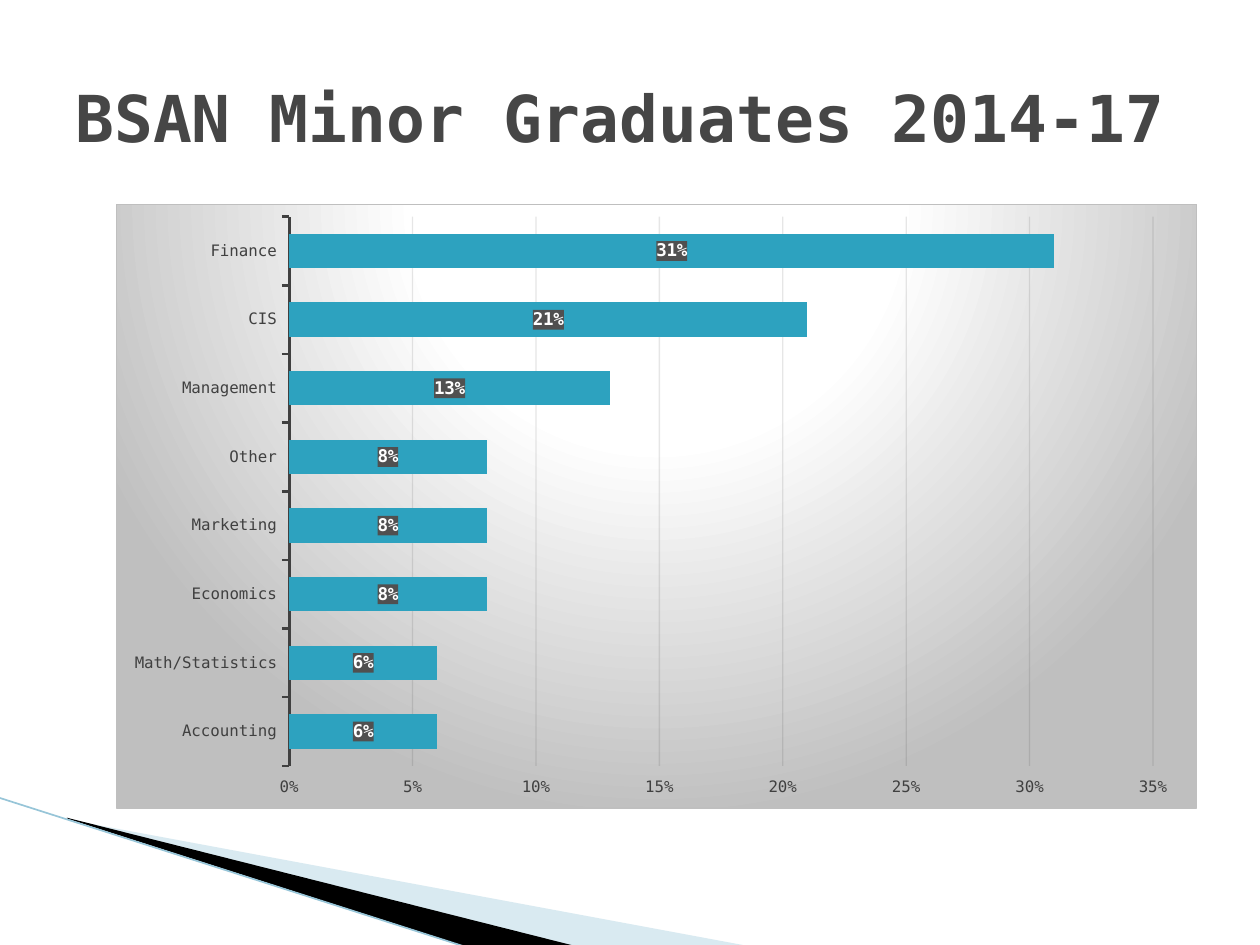
from lxml.etree import SubElement
from pptx import Presentation
from pptx.chart.data import CategoryChartData
from pptx.dml.color import RGBColor
from pptx.enum.chart import XL_CHART_TYPE, XL_LABEL_POSITION, XL_TICK_MARK
from pptx.enum.shapes import MSO_CONNECTOR
from pptx.enum.text import MSO_ANCHOR
from pptx.oxml import parse_xml
from pptx.oxml.ns import nsdecls, qn
from pptx.util import Pt

FONT = "DejaVu Sans Mono"
GRADUATE_SHARES = {
    "Accounting": 0.06,
    "Math/Statistics": 0.06,
    "Economics": 0.08,
    "Marketing": 0.08,
    "Other": 0.08,
    "Management": 0.13,
    "CIS": 0.21,
    "Finance": 0.31,
}


def color(value):
    return RGBColor.from_string(value)


def format_font(font, size, fill, bold=False):
    font.name = FONT
    font.size = Pt(size)
    font.bold = bold
    font.color.rgb = color(fill)


def set_alpha(solid_fill, percent):
    SubElement(solid_fill[0], qn("a:alpha")).set("val", str(percent * 1000))


def add_text(slide, text, left, top, width, height, **font_format):
    shape = slide.shapes.add_textbox(Pt(left), Pt(top), Pt(width), Pt(height))
    frame = shape.text_frame
    frame.word_wrap = True
    frame.vertical_anchor = MSO_ANCHOR.MIDDLE
    paragraph = frame.paragraphs[0]
    paragraph.text = text
    format_font(paragraph.runs[0].font, **font_format)


def add_wedge(slide, points, fill, alpha=100):
    start, *others = [(Pt(x), Pt(y)) for x, y in points]
    builder = slide.shapes.build_freeform(*start)
    builder.add_line_segments(others, close=True)
    shape = builder.convert_to_shape()
    shape.shadow.inherit = False
    shape.fill.solid()
    shape.fill.fore_color.rgb = color(fill)
    shape.line.fill.background()
    if alpha < 100:
        set_alpha(shape.fill._xPr.find(qn("a:solidFill")), alpha)


def add_line(slide, start, end, stroke, width):
    line = slide.shapes.add_connector(
        MSO_CONNECTOR.STRAIGHT, *[Pt(value) for value in start + end])
    line.line.color.rgb = color(stroke)
    line.line.width = Pt(width)
    SubElement(line._element.spPr, qn("a:effectLst"))


def add_chart_background(chart):
    stops = "".join(
        f'<a:gs pos="{position * 1000}"><a:srgbClr val="{value}"/></a:gs>'
        for position, value in ((0, "FFFFFF"), (39, "FFFFFF"), (100, "BFBFBF")))
    background = parse_xml(
        f'<c:spPr {nsdecls("c", "a")}><a:gradFill><a:gsLst>{stops}</a:gsLst>'
        '<a:path path="circle"><a:fillToRect l="50000" t="-80000" r="50000" b="180000"/>'
        '</a:path></a:gradFill><a:ln w="9525"><a:solidFill><a:srgbClr val="BFBFBF"/>'
        '</a:solidFill></a:ln></c:spPr>')
    chart._chartSpace.find(qn("c:txPr")).addprevious(background)


def place_plot(chart, **fractions):
    plot_area = chart._chartSpace.chart.plotArea
    for old_layout in plot_area.findall(qn("c:layout")):
        plot_area.remove(old_layout)
    values = "".join(f'<c:{key} val="{value}"/>' for key, value in fractions.items())
    plot_area.insert(0, parse_xml(
        f'<c:layout {nsdecls("c")}><c:manualLayout><c:layoutTarget val="inner"/>'
        '<c:xMode val="edge"/><c:yMode val="edge"/>'
        f'{values}</c:manualLayout></c:layout>'))


def format_axes(chart):
    category_axis, value_axis = chart.category_axis, chart.value_axis
    for axis in (category_axis, value_axis):
        axis.major_tick_mark = XL_TICK_MARK.OUTSIDE
        axis.minor_tick_mark = XL_TICK_MARK.NONE
        format_font(axis.tick_labels.font, 9, "404040")
    category_axis.format.line.color.rgb = color("404040")
    category_axis.format.line.width = Pt(1.5)
    value_axis.minimum_scale, value_axis.maximum_scale = 0, 0.35
    value_axis.major_unit = 0.05
    value_axis.tick_labels.number_format = "0%"
    value_axis.tick_labels.number_format_is_linked = False
    value_axis.format.line.fill.background()
    value_axis.has_major_gridlines = True
    gridline = value_axis.major_gridlines.format.line
    gridline.color.rgb = color("0D0D0D")
    gridline.width = Pt(0.75)
    set_alpha(gridline._ln.find(qn("a:solidFill")), 10)


def format_labels(plot):
    plot.has_data_labels = True
    labels = plot.data_labels
    labels.show_value = True
    labels.position = XL_LABEL_POSITION.CENTER
    labels.number_format = "0%"
    labels.number_format_is_linked = False
    format_font(labels.font, 10, "FFFFFF", bold=True)
    label_fill = parse_xml(
        f'<c:spPr {nsdecls("c", "a")}><a:solidFill><a:srgbClr val="505050"/>'
        '</a:solidFill></c:spPr>')
    labels._element.find(qn("c:txPr")).addprevious(label_fill)


def add_bar_chart(slide, shares, left, top, width, height):
    data = CategoryChartData(number_format="0%")
    data.categories = list(shares)
    data.add_series("Series 1", list(shares.values()))
    chart = slide.shapes.add_chart(
        XL_CHART_TYPE.BAR_CLUSTERED, Pt(left), Pt(top), Pt(width), Pt(height), data).chart
    chart.has_legend = False
    chart.has_title = False
    format_font(chart.font, 10, "000000")
    plot = chart.plots[0]
    plot.gap_width = 100
    plot.vary_by_categories = False
    series_fill = plot.series[0].format.fill
    series_fill.solid()
    series_fill.fore_color.rgb = color("2DA2BF")
    format_axes(chart)
    format_labels(plot)
    add_chart_background(chart)
    place_plot(chart, x=0.16, y=0.02, w=0.8, h=0.91)


def main():
    presentation = Presentation()
    presentation.slide_width, presentation.slide_height = Pt(720), Pt(540)
    slide = presentation.slides.add_slide(presentation.slide_layouts[6])
    add_wedge(slide, [(39.6, 468.5), (428.4, 540.7), (328.3, 540.7), (39.6, 468)],
              "A0CBDC", alpha=40)
    add_wedge(slide, [(38.2, 467.3), (329, 540.7), (267.8, 541.4), (38.9, 468)], "000000")
    add_line(slide, (-0.7, 455.8), (267.1, 541.4), "97C5D8", 0.95)
    add_text(slide, "BSAN Minor Graduates 2014-17", 36, 21.6, 648, 90,
             size=36.9, fill="464646", bold=True)
    add_bar_chart(slide, GRADUATE_SHARES, 66.2, 116.6, 617.8, 345.6)
    presentation.save("out.pptx")


if __name__ == "__main__":
    main()
